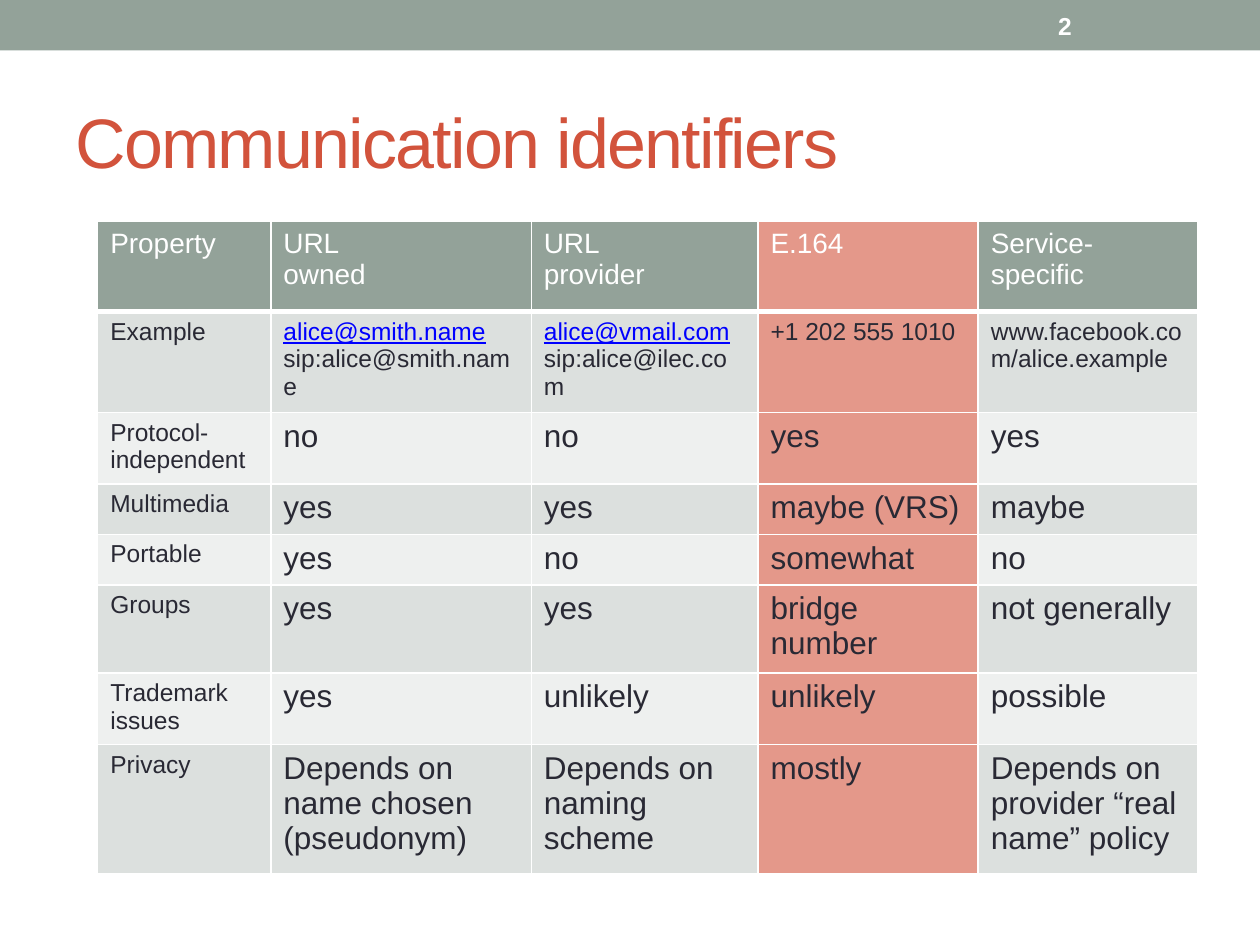
from lxml.etree import SubElement
from pptx import Presentation
from pptx.dml.color import RGBColor
from pptx.enum.shapes import MSO_SHAPE
from pptx.enum.text import MSO_ANCHOR
from pptx.oxml.ns import qn
from pptx.util import Cm, Pt

SAGE, CORAL, INK, WHITE = "93A299", "E4988A", "292934", "FFFFFF"
BANDS = ["EEF0EF", "DCE0DE"]
WIDTHS = [3.49, 5.25, 4.57, 4.44, 4.43]
HEIGHTS = [1.81, 1.93, 1.36, 0.97, 0.97, 1.67, 1.37, 2.6]
ROWS = [
    ["Property", "URL\nowned", "URL\nprovider", "E.164", "Service-specific"],
    ["Example", "alice@smith.name\nsip:alice@smith.name",
     "alice@vmail.com\nsip:alice@ilec.com", "+1 202 555 1010",
     "www.facebook.com/alice.example"],
    ["Protocol-independent", "no", "no", "yes", "yes"],
    ["Multimedia", "yes", "yes", "maybe (VRS)", "maybe"],
    ["Portable", "yes", "no", "somewhat", "no"],
    ["Groups", "yes", "yes", "bridge number", "not generally"],
    ["Trademark issues", "yes", "unlikely", "unlikely", "possible"],
    ["Privacy", "Depends on name chosen (pseudonym)",
     "Depends on naming scheme", "mostly",
     "Depends on provider “real name” policy"],
]


def tint(part, code):
    """Give a fill or a font a solid colour."""
    if hasattr(part, "solid"):
        part.solid()
        part.fore_color.rgb = RGBColor.from_string(code)
    else:
        part.color.rgb = RGBColor.from_string(code)


def write(para, text, code, size, **more):
    """Add one formatted run to a paragraph and return it."""
    run = para.add_run()
    run.text = text
    form = {"name": "Arial", "size": Pt(size), **more}
    for key, val in form.items():
        setattr(run.font, key, val)
    tint(run.font, code)
    return run


def label(slide, box, text, code, size, **more):
    """Place a vertically centred line of text and return its run."""
    frame = slide.shapes.add_textbox(*map(Cm, box)).text_frame
    form = {"word_wrap": True, "vertical_anchor": MSO_ANCHOR.MIDDLE}
    for key, val in form.items():
        setattr(frame, key, val)
    return write(frame.paragraphs[0], text, code, size, **more)


def banner(slide, box):
    """Draw the top band with the slide number."""
    left, top, wide, high = box
    band = slide.shapes.add_shape(MSO_SHAPE.RECTANGLE, *map(Cm, box))
    band.shadow.inherit = False
    tint(band.fill, SAGE)
    band.line.fill.background()
    spot = (left + wide * 0.83, top + 0.05, 2.97, high - 0.1)
    label(slide, spot, "2", WHITE, 14, bold=True)


def title(slide, box):
    """Place the heading with tightened letters."""
    run = label(slide, box, "Communication identifiers", "D2533C", 40)
    run.font._element.set("spc", "-100")


def edge(cell, base):
    """Draw white lines around a cell, the lower one base points wide."""
    props = cell._tc.get_or_add_tcPr()
    for side, size in {"L": 1, "R": 1, "T": 1, "B": base}.items():
        line = SubElement(props, qn(f"a:ln{side}"), w=str(Pt(size)))
        fill = SubElement(line, qn("a:solidFill"))
        SubElement(fill, qn("a:srgbClr"), val=WHITE)


def fill_cell(cell, text, row, col):
    """Write and colour one cell by its place in the grid."""
    head = row == 0
    edge(cell, 3 if head else 1)
    tint(cell.fill, CORAL if col == 3 else SAGE if head else BANDS[row % 2])
    size = 16 if head else 14 if row == 1 or col == 0 else 18
    frame = cell.text_frame
    for num, line in enumerate(text.split("\n")):
        para = frame.add_paragraph() if num else frame.paragraphs[0]
        mail = "@" in line and not line.startswith("sip:")
        code = WHITE if head else "0000FF" if mail else INK
        write(para, line, code, size, underline=mail)


def grid(slide, left, top):
    """Build the table of identifier properties."""
    box = (left, top, sum(WIDTHS), sum(HEIGHTS))
    table = slide.shapes.add_table(
        len(ROWS), len(WIDTHS), *map(Cm, box)).table
    for col, wide in zip(table.columns, WIDTHS):
        col.width = Cm(wide)
    for row, high in zip(table.rows, HEIGHTS):
        row.height = Cm(high)
    for row, texts in enumerate(ROWS):
        for col, text in enumerate(texts):
            fill_cell(table.cell(row, col), text, row, col)


def main():
    """Build and save the slide."""
    deck = Presentation()
    deck.slide_width, deck.slide_height = Cm(25.4), Cm(19.05)
    slide = deck.slides.add_slide(deck.slide_layouts[6])
    banner(slide, (0, 0, 25.4, 1.02))
    grid(slide, 1.97, 4.47)
    title(slide, (1.27, 1.47, 22.86, 2.74))
    deck.save("out.pptx")


if __name__ == "__main__":
    main()
